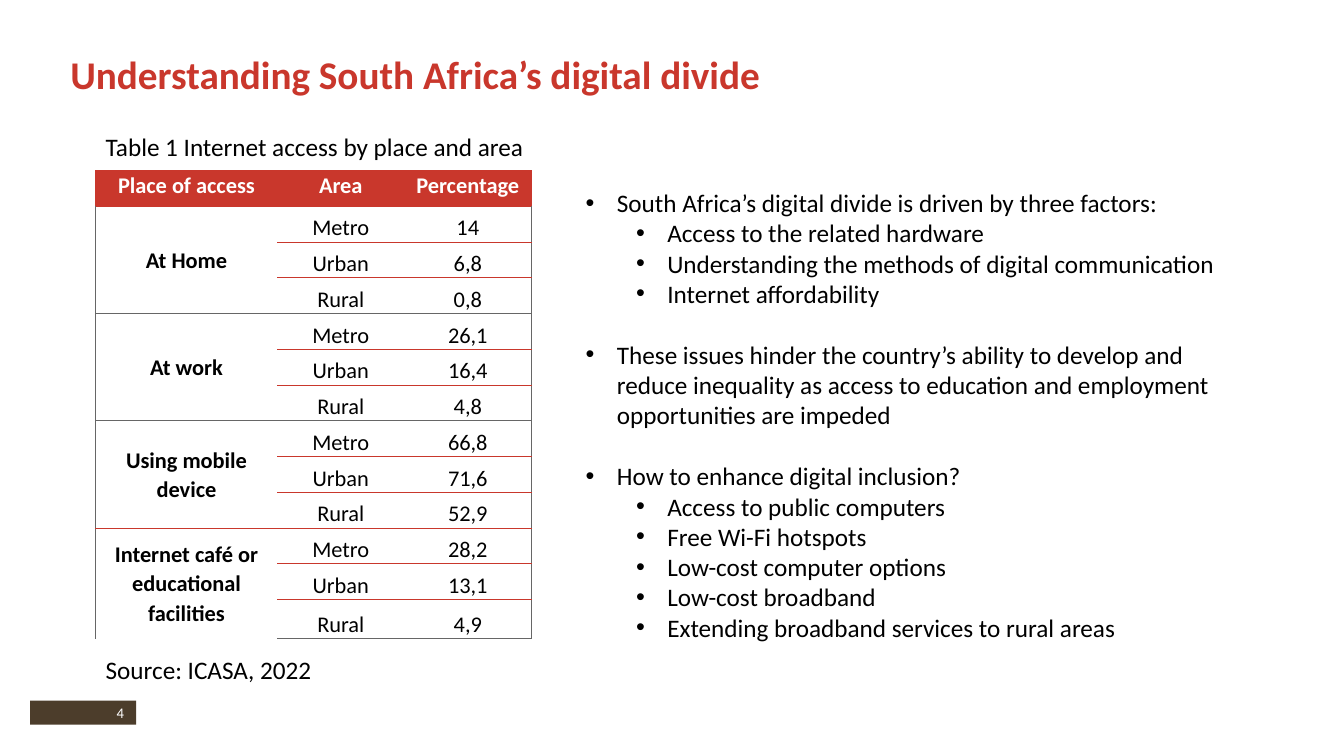
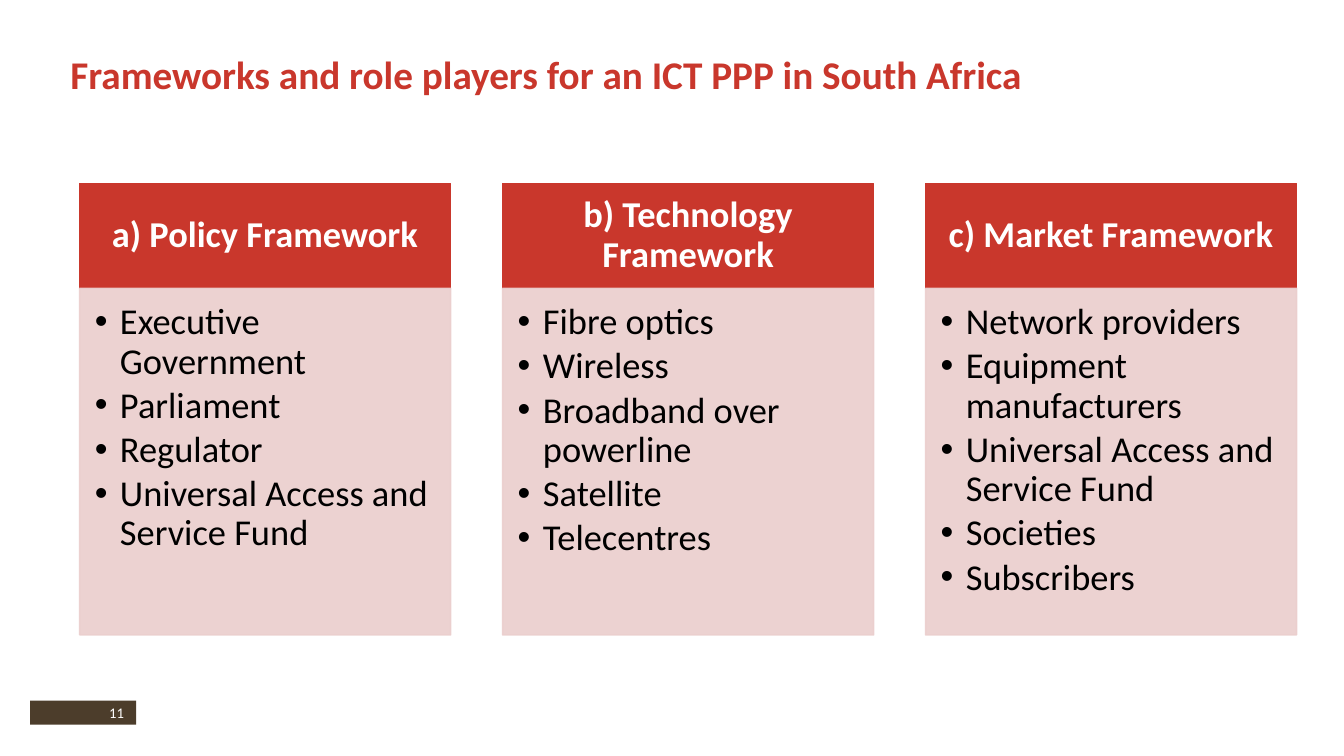
from lxml.etree import SubElement
from pptx import Presentation
from pptx.dml.color import RGBColor
from pptx.enum.shapes import MSO_SHAPE
from pptx.enum.text import MSO_ANCHOR, PP_ALIGN
from pptx.oxml.ns import qn
from pptx.util import Inches, Pt

COLORS = {
    "red": "C9372C",
    "pink": "EBCECD",
    "brown": "4C3D2B",
    "grey": "666666",
    "white": "FFFFFF",
    "black": "000000",
}
FONT = "Calibri"

DIVIDE_TITLE = "Understanding South Africa’s digital divide"
TABLE_CAPTION = "Table 1 Internet access by place and area"
TABLE_SOURCE = "Source: ICASA, 2022"
TABLE_HEADER = ["Place of access", "Area", "Percentage"]
AREAS = ["Metro", "Urban", "Rural"]
ACCESS = [
    ("At Home", ["14", "6,8", "0,8"], "grey"),
    ("At work", ["26,1", "16,4", "4,8"], "grey"),
    ("Using mobile device", ["66,8", "71,6", "52,9"], "red"),
    ("Internet café or educational facilities", ["28,2", "13,1", "4,9"], "grey"),
]
COLUMN_WIDTHS = [1.8, 1.26, 1.26]
ROW_HEIGHT, LAST_ROW_HEIGHT = 0.355, 0.39

DIVIDE_POINTS = [
    ("South Africa’s digital divide is driven by three factors:", [
        "Access to the related hardware",
        "Understanding the methods of digital communication",
        "Internet affordability",
    ]),
    ("These issues hinder the country’s ability to develop and reduce inequality "
     "as access to education and employment opportunities are impeded", []),
    ("How to enhance digital inclusion?", [
        "Access to public computers",
        "Free Wi-Fi hotspots",
        "Low-cost computer options",
        "Low-cost broadband",
        "Extending broadband services to rural areas",
    ]),
]

FRAMEWORK_TITLE = "Frameworks and role players for an ICT PPP in South Africa"
FRAMEWORKS = [
    ("a) Policy Framework", [
        "Executive Government", "Parliament", "Regulator",
        "Universal Access and Service Fund"]),
    ("b) Technology Framework", [
        "Fibre optics", "Wireless", "Broadband over powerline",
        "Satellite", "Telecentres"]),
    ("c) Market Framework", [
        "Network providers", "Equipment manufacturers",
        "Universal Access and Service Fund", "Societies", "Subscribers"]),
]
CARDS_LEFT, CARDS_RIGHT, CARD_WIDTH = 0.79, 12.86, 3.68
HEAD_TOP, HEAD_HEIGHT, BODY_HEIGHT = 1.82, 1.04, 3.44


def rgb(color):
    return RGBColor.from_string(COLORS[color])


def apply(target, values):
    for name, value in values.items():
        setattr(target, name, value)


def margins(left, top, right, bottom):
    sides = zip(("left", "top", "right", "bottom"), (left, top, right, bottom))
    return {f"margin_{side}": Inches(size) for side, size in sides}


def write(paragraph, text, size, color="black", bold=False, bullet=None, **layout):
    if bullet:
        left, hanging = bullet
        properties = paragraph._p.get_or_add_pPr()
        properties.set("marL", str(Inches(left)))
        properties.set("indent", str(-Inches(hanging)))
        SubElement(properties, qn("a:buFont"), typeface="Arial")
        SubElement(properties, qn("a:buChar"), char="•")
    apply(paragraph, layout)
    run = paragraph.add_run()
    run.text = text
    apply(run.font, {"name": FONT, "size": Pt(size), "bold": bold})
    run.font.color.rgb = rgb(color)


def next_paragraph(frame, index):
    return frame.add_paragraph() if index else frame.paragraphs[0]


def add_text(slide, box, **frame_values):
    frame = slide.shapes.add_textbox(*map(Inches, box)).text_frame
    apply(frame, {"word_wrap": True, **frame_values})
    return frame


def add_panel(slide, box, color, opacity=None, outlined=True, **frame_values):
    panel = slide.shapes.add_shape(MSO_SHAPE.RECTANGLE, *map(Inches, box))
    panel.shadow.inherit = False
    panel.fill.solid()
    panel.fill.fore_color.rgb = rgb(color)
    if outlined:
        panel.line.color.rgb = rgb(color)
        panel.line.width = Pt(1)
    else:
        panel.line.fill.background()
    if opacity:
        for tint in panel._element.spPr.iter(qn("a:srgbClr")):
            SubElement(tint, qn("a:alpha"), val=str(opacity * 1000))
    apply(panel.text_frame, {"word_wrap": True, **frame_values})
    return panel.text_frame


def add_base_slide(deck, title, number):
    slide = deck.slides.add_slide(deck.slide_layouts[6])
    footer = add_panel(slide, (0.3, 6.95, 1.05, 0.24), "brown", outlined=False,
                       vertical_anchor=MSO_ANCHOR.MIDDLE,
                       **margins(0.04, 0.04, 0.12, 0.04))
    write(footer.paragraphs[0], number, 10.5, "white", alignment=PP_ALIGN.RIGHT)
    heading = add_text(slide, (0.6, 0.4, 11.82, 0.72),
                       vertical_anchor=MSO_ANCHOR.MIDDLE)
    write(heading.paragraphs[0], title, 28, "red", True, line_spacing=0.9)
    return slide


def rule_color(edge, column):
    if edge <= 1:
        return "red"
    group, offset = divmod(edge - 1, len(AREAS))
    if offset:
        return "red" if column else None
    return ACCESS[group - 1][2]


def set_borders(cell, row, column):
    side = "grey" if row else "red"
    edges = {
        "a:lnL": None if column else side,
        "a:lnR": side if column == len(TABLE_HEADER) - 1 else None,
        "a:lnT": rule_color(row, column),
        "a:lnB": rule_color(row + 1, column),
    }
    properties = cell._tc.get_or_add_tcPr()
    for tag, color in edges.items():
        line = SubElement(properties, qn(tag), w=str(Pt(0.5)))
        if color:
            fill = SubElement(line, qn("a:solidFill"))
            SubElement(fill, qn("a:srgbClr"), val=COLORS[color])
        else:
            SubElement(line, qn("a:noFill"))


def add_access_table(slide):
    rows = [TABLE_HEADER]
    for place, shares, _ in ACCESS:
        for index, (area, share) in enumerate(zip(AREAS, shares)):
            rows.append(["" if index else place, area, share])
    heights = [ROW_HEIGHT] * (len(rows) - 1) + [LAST_ROW_HEIGHT]
    table = slide.shapes.add_table(
        len(rows), len(TABLE_HEADER), Inches(0.95), Inches(1.69),
        Inches(sum(COLUMN_WIDTHS)), Inches(sum(heights))).table
    apply(table, {"first_row": False, "horz_banding": False})
    for column, width in zip(table.columns, COLUMN_WIDTHS):
        column.width = Inches(width)
    for row, height in zip(table.rows, heights):
        row.height = Inches(height)
    for r, texts in enumerate(rows):
        for c, text in enumerate(texts):
            cell = table.cell(r, c)
            set_borders(cell, r, c)
            cell.fill.solid()
            cell.fill.fore_color.rgb = rgb("white" if r else "red")
            body_anchor = MSO_ANCHOR.BOTTOM if c else MSO_ANCHOR.MIDDLE
            apply(cell, {"vertical_anchor": body_anchor if r else MSO_ANCHOR.TOP,
                         **margins(0.07, 0, 0.07, 0)})
            if text:
                write(cell.text_frame.paragraphs[0], text, 16,
                      "black" if r else "white", r == 0 or c == 0,
                      alignment=PP_ALIGN.CENTER, line_spacing=1.07)
    for first in range(1, len(rows), len(AREAS)):
        table.cell(first, 0).merge(table.cell(first + len(AREAS) - 1, 0))


def add_divide_slide(deck):
    slide = add_base_slide(deck, DIVIDE_TITLE, "4")
    add_access_table(slide)
    points = add_text(slide, (5.71, 1.81, 6.71, 4.64))
    for index, (point, details) in enumerate(DIVIDE_POINTS):
        write(next_paragraph(points, index), point, 18, bullet=(0.31, 0.31),
              space_before=Pt(22 if index else 0))
        for detail in details:
            write(points.add_paragraph(), detail, 18, bullet=(0.81, 0.31), level=1)
    for text, top in ((TABLE_CAPTION, 1.25), (TABLE_SOURCE, 6.44)):
        note = add_text(slide, (0.95, top, 4.7, 0.4))
        write(note.paragraphs[0], text, 18)


def add_framework_slide(deck):
    slide = add_base_slide(deck, FRAMEWORK_TITLE, "11")
    pitch = (CARDS_RIGHT - CARDS_LEFT - CARD_WIDTH) / (len(FRAMEWORKS) - 1)
    for index, (framework, players) in enumerate(FRAMEWORKS):
        left = CARDS_LEFT + index * pitch
        head = add_panel(slide, (left, HEAD_TOP, CARD_WIDTH, HEAD_HEIGHT), "red",
                         vertical_anchor=MSO_ANCHOR.MIDDLE,
                         **margins(0.2, 0.12, 0.2, 0.12))
        write(head.paragraphs[0], framework, 26, "white", True,
              alignment=PP_ALIGN.CENTER, line_spacing=0.9)
        body = add_panel(slide, (left, HEAD_TOP + HEAD_HEIGHT, CARD_WIDTH, BODY_HEIGHT),
                         "pink", 90, vertical_anchor=MSO_ANCHOR.TOP,
                         **margins(0.15, 0.15, 0.2, 0.23))
        for order, player in enumerate(players):
            write(next_paragraph(body, order), player, 26, bullet=(0.25, 0.25),
                  alignment=PP_ALIGN.LEFT, line_spacing=0.9, space_after=Pt(3.5))


def main():
    deck = Presentation()
    apply(deck, {"slide_width": Inches(13.33), "slide_height": Inches(7.5)})
    add_divide_slide(deck)
    add_framework_slide(deck)
    deck.save("out.pptx")


if __name__ == "__main__":
    main()
